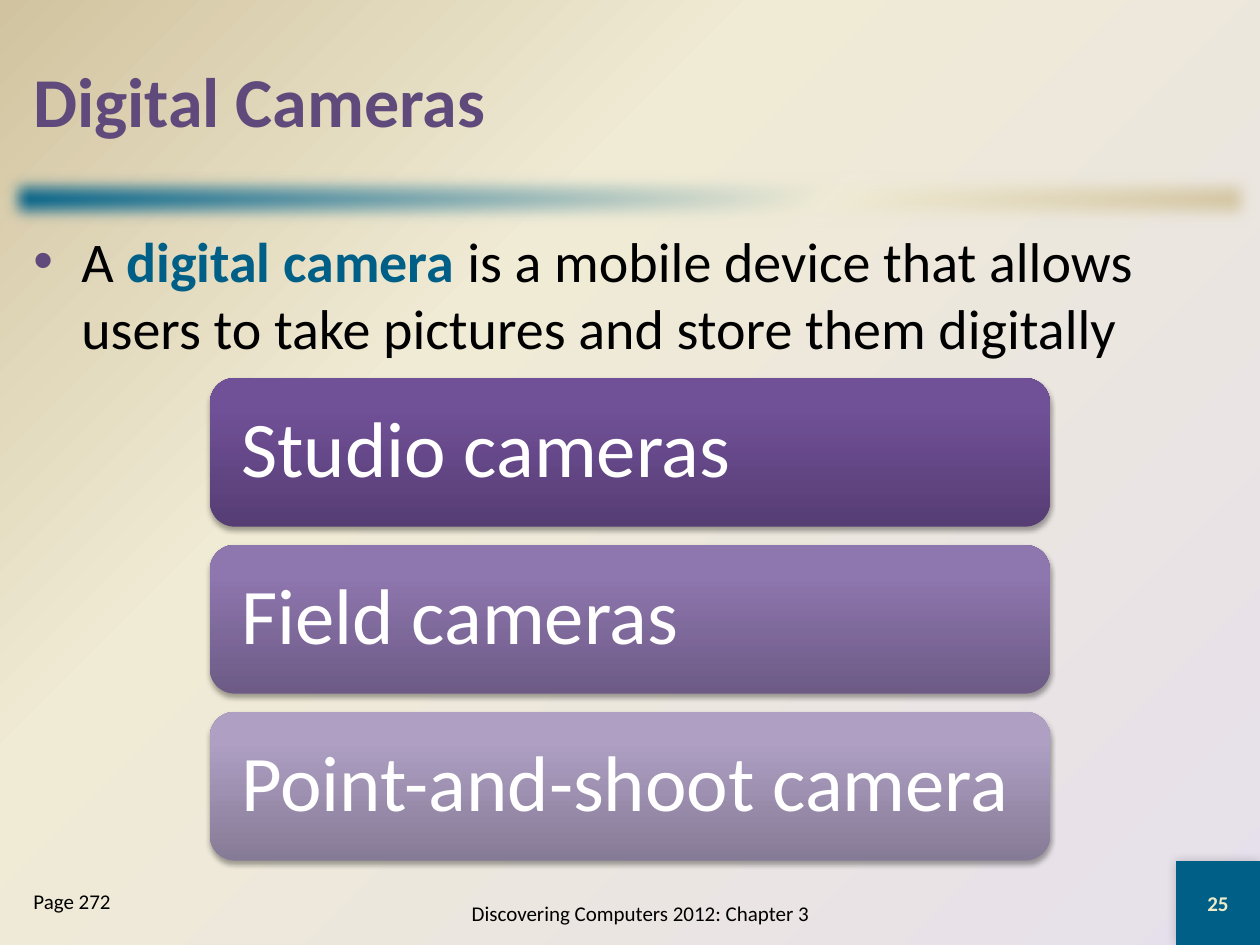
"""Build the Digital Cameras slide on a grid of 60 columns by 45 rows."""
from lxml import etree
from pptx import Presentation
from pptx.dml.color import RGBColor
from pptx.enum.shapes import MSO_SHAPE
from pptx.enum.text import MSO_ANCHOR, PP_ALIGN
from pptx.oxml import parse_xml
from pptx.oxml.ns import nsdecls, qn
from pptx.util import Inches, Pt

COLORS = {
    "teal": "005F86", "cream": "F0EBD5", "sand": "D1C39F", "lilac": "E6E0EC",
    "purple": "604A7B", "black": "000000", "white": "FFFFFF", "number": "EEEBCA",
}
CARDS = [
    ("Studio cameras", ("563D74", "705097", "704F99")),
    ("Field cameras", ("6D5B86", "8E76AE", "8E75B0")),
    ("Point-and-shoot camera", ("867B96", "AE9FC3", "AE9FC4")),
]
UNIT = Inches(10) // 60


def gradient(element, stops, direction):
    solid = next(element.iter(qn("a:solidFill")))
    marks = "".join(
        f'<a:gs pos="{share * 1000}"><a:srgbClr val="{color}"/></a:gs>' for share, color in stops)
    solid.getparent().replace(solid, parse_xml(
        f'<a:gradFill {nsdecls("a")} rotWithShape="1"><a:gsLst>{marks}</a:gsLst>{direction}</a:gradFill>'))


def effect(shape, inner):
    shape.shadow.inherit = False
    effects = shape._element.spPr.find(qn("a:effectLst"))
    effects.append(parse_xml(inner.replace(" ", f' {nsdecls("a")} ', 1)))


SHADOW = ('<a:outerShdw blurRad="{}" dist="{}" dir="{}" algn="ctr" rotWithShape="0">'
          '<a:srgbClr val="000000"><a:alpha val="{}"/></a:srgbClr></a:outerShdw>')

deck = Presentation()
deck.slide_width, deck.slide_height = 60 * UNIT, 45 * UNIT
slide = deck.slides.add_slide(deck.slide_layouts[6])
shapes = slide.shapes

slide.background.fill.solid()
slide.background.fill.fore_color.rgb = RGBColor.from_string(COLORS["lilac"])
gradient(slide._element, [(0, COLORS["lilac"]), (65, COLORS["cream"]), (100, COLORS["sand"])],
         '<a:path path="circle"><a:fillToRect l="100000" t="100000"/></a:path>')

divider = shapes.add_shape(MSO_SHAPE.RECTANGLE, 0, 8 * UNIT, 60 * UNIT, 3 * UNIT)
divider.fill.solid()
divider.line.fill.background()
gradient(divider._element, [(0, COLORS["teal"]), (65, COLORS["cream"]), (100, COLORS["sand"])],
         '<a:lin ang="2700000" scaled="0"/>')
effect(divider, '<a:softEdge rad="127000"/>')

badge = shapes.add_shape(MSO_SHAPE.RECTANGLE, 56 * UNIT, 41 * UNIT, 4 * UNIT, 4 * UNIT)
badge.fill.solid()
badge.fill.fore_color.rgb = RGBColor.from_string(COLORS["teal"])
badge.line.fill.background()
effect(badge, SHADOW.format(Pt(6), 0, 225 * 60000, 20000))

title = shapes.add_textbox(UNIT, UNIT, 58 * UNIT, 7.5 * UNIT)
definition = shapes.add_textbox(UNIT, 10.5 * UNIT, 58 * UNIT, 30.5 * UNIT)
footer = shapes.add_textbox(18 * UNIT, 42 * UNIT, 25 * UNIT, 3 * UNIT)
page = shapes.add_textbox(UNIT, 42 * UNIT, 11 * UNIT, 3 * UNIT)

wording = [
    (title, MSO_ANCHOR.MIDDLE, PP_ALIGN.LEFT, 40, [("Digital Cameras", "purple", True)]),
    (definition, MSO_ANCHOR.TOP, PP_ALIGN.LEFT, 32, [
        ("A ", "black", False),
        ("digital camera ", "teal", True),
        ("is a mobile device that allows users to take pictures and store them digitally",
         "black", False)]),
    (footer, MSO_ANCHOR.MIDDLE, PP_ALIGN.CENTER, 12,
     [("Discovering Computers 2012: Chapter 3", "black", False)]),
    (badge, MSO_ANCHOR.MIDDLE, PP_ALIGN.CENTER, 12, [("25", "number", True)]),
    (page, MSO_ANCHOR.TOP, PP_ALIGN.LEFT, 12, [("Page 272", "black", False)]),
]

for row, (label, shades) in enumerate(CARDS):
    card = shapes.add_shape(MSO_SHAPE.ROUNDED_RECTANGLE, 10 * UNIT, round((18 + 7.95 * row) * UNIT),
                            40 * UNIT, round(7.08 * UNIT))
    card.fill.solid()
    card.line.fill.background()
    gradient(card._element, zip((0, 80, 100), shades), '<a:lin ang="16200000" scaled="0"/>')
    effect(card, SHADOW.format(Pt(3.1), Pt(1.8), 90 * 60000, 35000))
    card.text_frame.margin_left = card.text_frame.margin_right = Inches(0.19)
    card.text_frame.margin_top = card.text_frame.margin_bottom = 0
    card.text_frame.paragraphs[0].line_spacing = 0.9
    wording.append((card, MSO_ANCHOR.MIDDLE, PP_ALIGN.LEFT, 45, [(label, "white", False)]))

bulleted = definition.text_frame.paragraphs[0]._p.get_or_add_pPr()
bulleted.set("marL", str(Inches(0.38)))
bulleted.set("indent", str(-Inches(0.38)))
bullet_color = etree.SubElement(bulleted, qn("a:buClr"))
etree.SubElement(bullet_color, qn("a:srgbClr"), val=COLORS["purple"])
etree.SubElement(bulleted, qn("a:buFont"), typeface="Arial")
etree.SubElement(bulleted, qn("a:buChar"), char="•")

for holder, anchor, alignment, size, runs in wording:
    frame = holder.text_frame
    frame.word_wrap = True
    frame.vertical_anchor = anchor
    paragraph = frame.paragraphs[0]
    paragraph.alignment = alignment
    for text, color, bold in runs:
        run = paragraph.add_run()
        run.text = text
        run.font.name = "Calibri"
        run.font.size = Pt(size)
        run.font.bold = bold
        run.font.color.rgb = RGBColor.from_string(COLORS[color])

deck.save("out.pptx")
